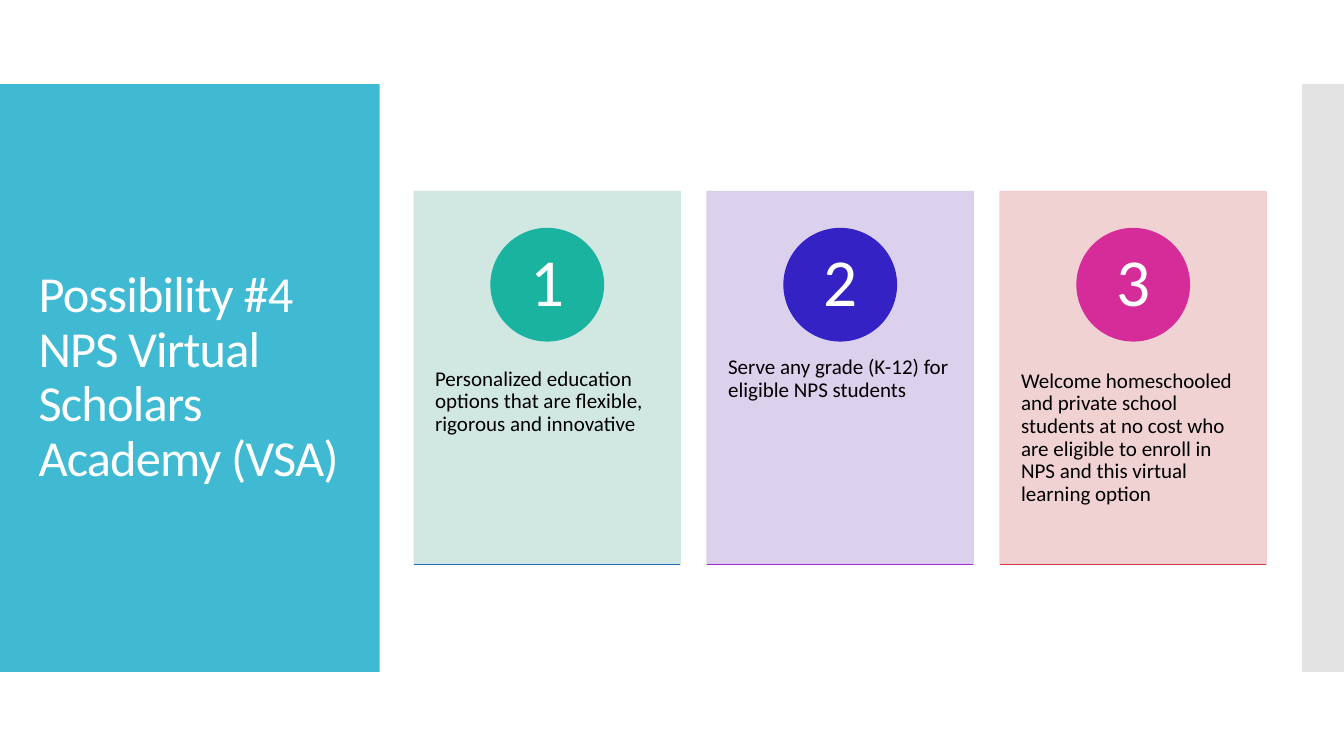
from lxml.etree import SubElement
from pptx import Presentation
from pptx.dml.color import RGBColor
from pptx.enum.shapes import MSO_CONNECTOR as CONN, MSO_SHAPE as SHAPE
from pptx.enum.text import MSO_ANCHOR as ANCHOR, PP_ALIGN as ALIGN
from pptx.oxml.ns import qn
from pptx.util import Inches, Pt

WHITE = RGBColor(0xFF, 0xFF, 0xFF)
BLACK = RGBColor(0x00, 0x00, 0x00)
CYAN = RGBColor(0x40, 0xBA, 0xD2)
GRAY = RGBColor(0xC8, 0xC8, 0xC8)
MINT = RGBColor(0xCD, 0xE5, 0xDF)
TEAL = RGBColor(0x1A, 0xB3, 0x9F)
BLUE = RGBColor(0x1E, 0x6F, 0xBC)
LILAC = RGBColor(0xD8, 0xCD, 0xEA)
INDIGO = RGBColor(0x34, 0x22, 0xC5)
PURPLE = RGBColor(0xA1, 0x26, 0xCE)
ROSE = RGBColor(0xEF, 0xCE, 0xCF)
MAGENTA = RGBColor(0xD5, 0x2C, 0x99)
RED = RGBColor(0xD5, 0x39, 0x3D)

TITLE = "Possibility #4 NPS Virtual Scholars Academy (VSA)"
CARDS = [
    ("Personalized education options that are flexible, rigorous and innovative",
     MINT, TEAL, BLUE),
    ("Serve any grade (K-12) for eligible NPS students",
     LILAC, INDIGO, PURPLE),
    ("Welcome homeschooled and private school students at no cost who are "
     "eligible to enroll in NPS and this virtual learning option",
     ROSE, MAGENTA, RED),
]

COLS, ROWS = 160, 90
CARD_LEFT, CARD_TOP, CARD_W, CARD_H = 49.3, 22.8, 31.7, 44.4
CARD_PITCH = 34.88
CIRCLE_TOP, CIRCLE_SIZE = 27.2, 13.4
BODY_TOP, BODY_H = 39.75, 26.6


class SlideBuilder:
    """Draws on one slide; lengths are columns and rows of a 160 by 90 grid."""

    font = "Calibri"
    line_width = Pt(0.85)

    def __init__(self, prs):
        self.s = prs.slides.add_slide(prs.slide_layouts[6])
        self.col = prs.slide_width / COLS
        self.row = prs.slide_height / ROWS

    def box(self, x, y, w, h):
        return (round(x * self.col), round(y * self.row),
                round(w * self.col), round(h * self.row))

    def shape(self, kind, x, y, w, h, color, opacity=100, outlined=False):
        sp = self.s.shapes.add_shape(kind, *self.box(x, y, w, h))
        sp.shadow.inherit = False
        fills = [sp.fill]
        if outlined:
            sp.line.width = self.line_width
            fills.append(sp.line.fill)
        else:
            sp.line.fill.background()
        for fill in fills:
            fill.solid()
            fill.fore_color.rgb = color
        if opacity < 100:
            for clr in sp._element.spPr.iter(qn("a:srgbClr")):
                SubElement(clr, qn("a:alpha"), val=str(opacity * 1000))
        return sp

    def rule(self, x, y, w, color):
        x, y, w, _ = self.box(x, y, w, 0)
        line = self.s.shapes.add_connector(CONN.STRAIGHT, x, y, x + w, y)
        line.line.color.rgb = color
        line.line.width = self.line_width
        SubElement(line._element.spPr, qn("a:effectLst"))

    def set_text(self, sp, text, size, color, anchor, align=ALIGN.LEFT,
                 inset=(1.2, 0.6), tracking=0):
        """Put text in a shape; tracking is in hundredths of a point."""
        tf = sp.text_frame
        tf.word_wrap = True
        tf.vertical_anchor = anchor
        tf.margin_left = tf.margin_right = round(inset[0] * self.col)
        tf.margin_top = tf.margin_bottom = round(inset[1] * self.row)
        tf.text = text
        p = tf.paragraphs[0]
        p.alignment = align
        p.line_spacing = 0.9
        r = p.runs[0]
        r.font.name = self.font
        r.font.size = Pt(size)
        r.font.color.rgb = color
        if tracking:
            r.font._element.set("spc", str(tracking))

    def text(self, x, y, w, h, *args, **style):
        sp = self.s.shapes.add_textbox(*self.box(x, y, w, h))
        self.set_text(sp, *args, **style)

    def card(self, number, text, tint, accent, rule_color):
        x = CARD_LEFT + (number - 1) * CARD_PITCH
        self.shape(SHAPE.RECTANGLE, x, CARD_TOP, CARD_W, CARD_H, tint,
                   opacity=90, outlined=True)
        self.text(x, BODY_TOP, CARD_W, BODY_H, text, 15, BLACK, ANCHOR.TOP,
                  inset=(2.5, 4.3))
        circle = self.shape(SHAPE.OVAL, x + (CARD_W - CIRCLE_SIZE) / 2,
                            CIRCLE_TOP, CIRCLE_SIZE, CIRCLE_SIZE, accent,
                            outlined=True)
        self.set_text(circle, str(number), 48, WHITE, ANCHOR.MIDDLE,
                      ALIGN.CENTER, inset=(1, 0.15))
        self.rule(x, CARD_TOP + CARD_H, CARD_W, rule_color)


def main():
    prs = Presentation()
    prs.slide_width, prs.slide_height = Inches(13.33), Inches(7.5)
    slide = SlideBuilder(prs)
    slide.shape(SHAPE.RECTANGLE, 0, 10, 45.2, 70, CYAN)
    slide.shape(SHAPE.RECTANGLE, 155, 10, 5, 70, GRAY, opacity=50)
    slide.text(3.4, 14.8, 38.6, 60.4, TITLE, 36, WHITE, ANCHOR.MIDDLE,
               tracking=-60)
    for number, card in enumerate(CARDS, 1):
        slide.card(number, *card)
    prs.save("out.pptx")


if __name__ == "__main__":
    main()
